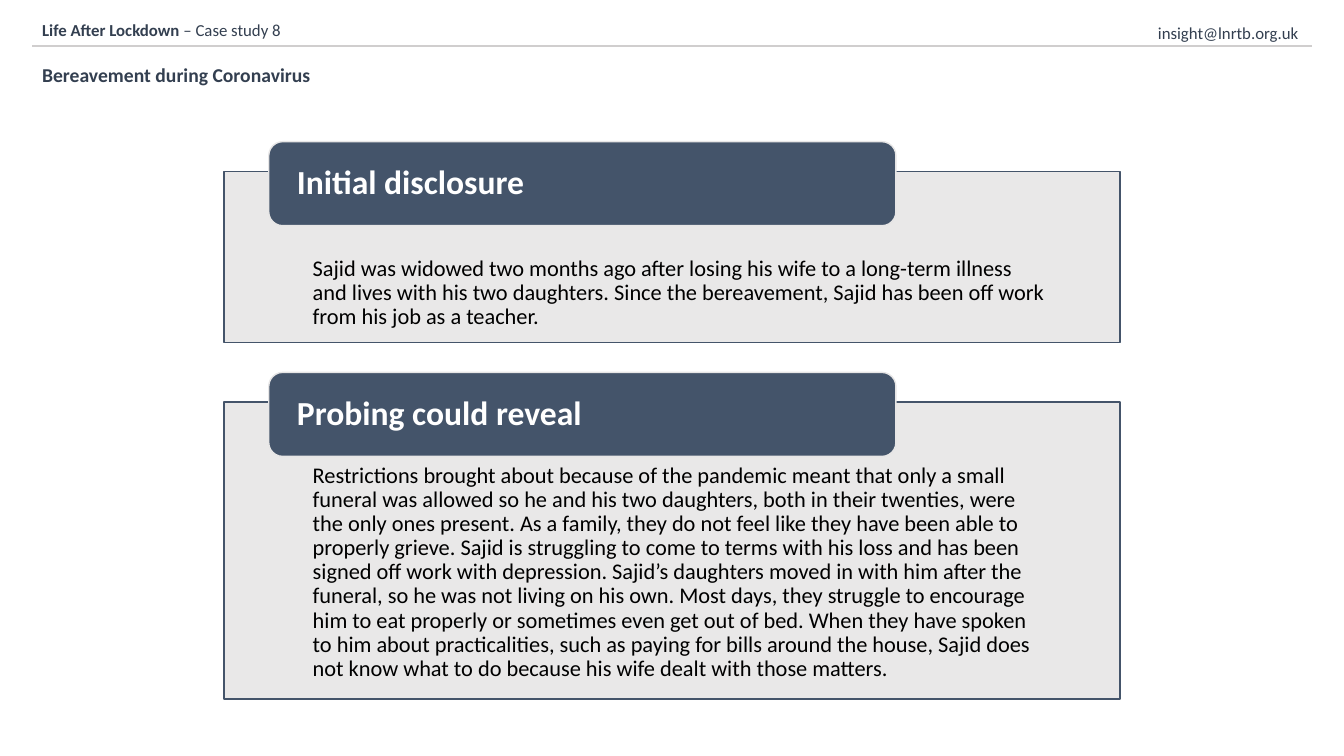
from lxml import etree
from pptx import Presentation
from pptx.dml.color import RGBColor
from pptx.enum.shapes import MSO_CONNECTOR, MSO_SHAPE
from pptx.enum.text import MSO_ANCHOR, PP_ALIGN
from pptx.oxml.ns import qn
from pptx.util import Pt

WHITE = RGBColor(0xFF, 0xFF, 0xFF)
BLACK = RGBColor(0x00, 0x00, 0x00)
INK = RGBColor(0x33, 0x3F, 0x50)
SLATE = RGBColor(0x44, 0x54, 0x6A)
PALE = RGBColor(0xE7, 0xE6, 0xE6)
RULE = RGBColor(0xD0, 0xCE, 0xCE)


def write(sp, runs, size, color, spacing, anchor, insets):
    tf = sp.text_frame
    left, top, right, bottom = insets
    frame = {"word_wrap": True, "vertical_anchor": anchor,
             "margin_left": Pt(left), "margin_top": Pt(top),
             "margin_right": Pt(right), "margin_bottom": Pt(bottom)}
    for name, value in frame.items():
        setattr(tf, name, value)
    p = tf.paragraphs[0]
    p.alignment = PP_ALIGN.LEFT
    p.line_spacing = spacing
    for text, bold in runs:
        r = p.add_run()
        r.text = text
        r.font.color.rgb = color
        for name, value in {"name": "Calibri", "size": Pt(size), "bold": bold}.items():
            setattr(r.font, name, value)


def add_box(s, kind, left, top, width, height, fill, line):
    sp = s.shapes.add_shape(kind, Pt(left), Pt(top), Pt(width), Pt(height))
    sp.shadow.inherit = False
    sp.fill.solid()
    sp.fill.fore_color.rgb = fill
    sp.line.color.rgb = line
    sp.line.width = Pt(1)
    return sp


prs = Presentation()
prs.slide_width, prs.slide_height = Pt(960), Pt(540)
s = prs.slides.add_slide(prs.slide_layouts[6])

labels = [
    (23, 10.8, 433, 21.8, 12, 1.0, [("Life After Lockdown ", True), ("– Case study 8", False)]),
    (820, 5.8, 118, 26.6, 12, 1.5, [("insight@lnrtb.org.uk", False)]),
    (23, 33.1, 280, 30.2, 14, 1.5, [("Bereavement during Coronavirus", True)]),
]
for left, top, width, height, size, spacing, runs in labels:
    sp = s.shapes.add_textbox(Pt(left), Pt(top), Pt(width), Pt(height))
    write(sp, runs, size, INK, spacing, MSO_ANCHOR.TOP, (7.2, 3.6, 7.2, 3.6))

rule = s.shapes.add_connector(MSO_CONNECTOR.STRAIGHT, Pt(23), Pt(33), Pt(937), Pt(33))
rule.line.color.rgb = RULE
rule.line.width = Pt(1.5)
etree.SubElement(rule._element.spPr, qn("a:effectLst"))

panels = [
    ("Initial disclosure", 122.4, 122.4, MSO_ANCHOR.MIDDLE, 60.5,
     "Sajid was widowed two months ago after losing his wife to a long-term illness "
     "and lives with his two daughters. Since the bereavement, Sajid has been off work "
     "from his job as a teacher."),
    ("Probing could reveal", 287.2, 212, MSO_ANCHOR.TOP, 44,
     "Restrictions brought about because of the pandemic meant that only a small "
     "funeral was allowed so he and his two daughters, both in their twenties, were "
     "the only ones present. As a family, they do not feel like they have been able to "
     "properly grieve. Sajid is struggling to come to terms with his loss and has been "
     "signed off work with depression. Sajid’s daughters moved in with him after the "
     "funeral, so he was not living on his own. Most days, they struggle to encourage "
     "him to eat properly or sometimes even get out of bed. When they have spoken "
     "to him about practicalities, such as paying for bills around the house, Sajid does "
     "not know what to do because his wife dealt with those matters."),
]
for heading, top, height, anchor, inset, body in panels:
    panel = add_box(s, MSO_SHAPE.RECTANGLE, 160, top, 640, height, PALE, SLATE)
    color = panel._element.spPr.find(qn("a:solidFill"))[0]
    etree.SubElement(color, qn("a:alpha"), val="90000")
    write(panel, [(body, False)], 16, BLACK, 0.9, anchor, (63.4, inset, 49.7, 8.6))
    tab = add_box(s, MSO_SHAPE.ROUNDED_RECTANGLE, 192, top - 21.2, 448, 60, SLATE, PALE)
    write(tab, [(heading, True)], 24, WHITE, 0.9, MSO_ANCHOR.MIDDLE, (17.2, 0, 17.2, 0))

prs.save("out.pptx")
